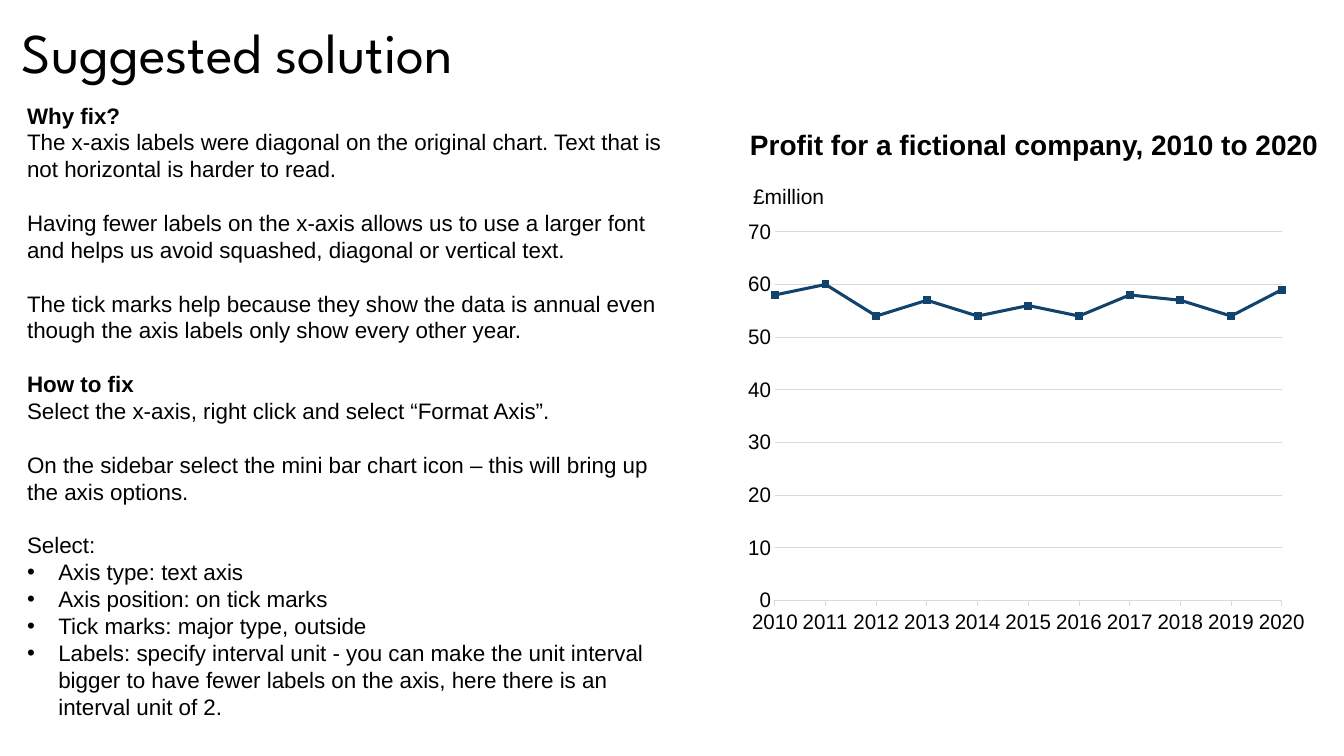
from lxml import etree
from pptx import Presentation
from pptx.chart.data import CategoryChartData
from pptx.dml.color import RGBColor
from pptx.enum.chart import XL_CHART_TYPE, XL_TICK_MARK
from pptx.enum.text import MSO_ANCHOR, MSO_AUTO_SIZE
from pptx.oxml import parse_xml
from pptx.oxml.ns import nsdecls, qn
from pptx.util import Inches, Pt

LINE = XL_CHART_TYPE.LINE
OUT, NONE = XL_TICK_MARK.OUTSIDE, XL_TICK_MARK.NONE
MIDDLE, TOP = MSO_ANCHOR.MIDDLE, MSO_ANCHOR.TOP
GROW = MSO_AUTO_SIZE.SHAPE_TO_FIT_TEXT

BLACK, GREY, NAVY = "000000", "D9D9D9", "12436D"
SANS = "Arial"
GAP = 19.2
HANG = Inches(0.31)

TITLE = "Suggested solution"
HEADING = "Profit for a fictional company, 2010 to 2020"
UNIT = "£million"
NOTES = [
    ("head", "Why fix?"),
    ("body", "The x-axis labels were diagonal on the original chart. "
             "Text that is not horizontal is harder to read."),
    ("gap", "Having fewer labels on the x-axis allows us to use a larger font "
            "and helps us avoid squashed, diagonal or vertical text."),
    ("gap", "The tick marks help because they show the data is annual even "
            "though the axis labels only show every other year."),
    ("head", "How to fix"),
    ("body", "Select the x-axis, right click and select “Format Axis”."),
    ("gap", "On the sidebar select the mini bar chart icon – this will "
            "bring up the axis options."),
    ("gap", "Select:"),
    ("item", "Axis type: text axis"),
    ("item", "Axis position: on tick marks"),
    ("item", "Tick marks: major type, outside"),
    ("item", "Labels: specify interval unit - you can make the unit interval "
             "bigger to have fewer labels on the axis, here there is an "
             "interval unit of 2."),
]
YEARS = [str(year) for year in range(2010, 2021)]
PROFIT = [58, 60, 54, 57, 54, 56, 54, 58, 57, 54, 59]
PLOT = {"x": 0.047, "y": 0.144, "w": 0.932, "h": 0.742}


def color(code):
    return RGBColor.from_string(code)


def style(font, size, name=SANS, bold=False):
    font.size, font.name, font.bold = Pt(size), name, bold
    font.color.rgb = color(BLACK)


def stroke(line, code, width):
    line.color.rgb = color(code)
    line.width = Pt(width)


def add_box(slide, area, anchor=TOP):
    frame = slide.shapes.add_textbox(*map(Inches, area)).text_frame
    frame.word_wrap = True
    frame.vertical_anchor = anchor
    return frame


def add_label(slide, area, text, size, bold=False):
    frame = add_box(slide, area)
    frame.auto_size = GROW
    frame.text = text
    style(frame.paragraphs[0].runs[0].font, size, bold=bold)


def add_title(slide):
    frame = add_box(slide, (0.12, -0.08, 11.93, 1.25), MIDDLE)
    frame.text = TITLE
    para = frame.paragraphs[0]
    para.line_spacing = 0.9
    style(para.runs[0].font, 40, "League Spartan")


def add_notes(slide):
    frame = add_box(slide, (0.17, 0.96, 6.71, 6.83))
    for i, (kind, text) in enumerate(NOTES):
        para = frame.add_paragraph() if i else frame.paragraphs[0]
        para.text = text
        if i and kind in ("head", "gap"):
            para.space_before = Pt(GAP)
        if kind == "item":
            props = para._p.get_or_add_pPr()
            props.set("marL", str(HANG))
            props.set("indent", str(-HANG))
            etree.SubElement(props, qn("a:buFont")).set("typeface", SANS)
            etree.SubElement(props, qn("a:buChar")).set("char", "•")
        style(para.runs[0].font, 16, bold=kind == "head")


def add_graph(slide):
    data = CategoryChartData()
    data.categories = YEARS
    data.add_series("Series 1", PROFIT)
    area = map(Inches, (7.42, 1.59, 5.52, 4.93))
    chart = slide.shapes.add_chart(LINE, *area, data).chart
    chart.has_legend = chart.has_title = False
    style(chart.font, 10, "Calibri")

    years, money = chart.category_axis, chart.value_axis
    for axis, tick in ((years, OUT), (money, NONE)):
        axis.major_tick_mark, axis.minor_tick_mark = tick, NONE
        style(axis.tick_labels.font, 15)
    years.has_major_gridlines = False
    stroke(years.format.line, GREY, 0.75)
    money.minimum_scale, money.maximum_scale, money.major_unit = 0, 70, 10
    money.format.line.fill.background()
    stroke(money.major_gridlines.format.line, GREY, 0.75)

    plot = chart.plots[0]
    plot.vary_by_categories = False
    series = plot.series[0]
    series.smooth = False
    series.marker.style = None
    stroke(series.format.line, NAVY, 2.25)

    root = chart._chartSpace
    cross = root.find(".//" + qn("c:crossBetween"))
    if cross is None:
        cross = etree.Element(qn("c:crossBetween"))
        root.find(".//" + qn("c:valAx")).find(qn("c:crosses")).addnext(cross)
    cross.set("val", "midCat")
    region = root.find(".//" + qn("c:plotArea"))
    old = region.find(qn("c:layout"))
    if old is not None:
        region.remove(old)
    modes = "".join(f'<c:{k}Mode val="edge"/>' for k in "xy")
    sizes = "".join(f'<c:{k} val="{v}"/>' for k, v in PLOT.items())
    region.insert(0, parse_xml(
        f'<c:layout {nsdecls("c")}><c:manualLayout>'
        f'<c:layoutTarget val="inner"/>{modes}{sizes}'
        '</c:manualLayout></c:layout>'))


def main():
    deck = Presentation()
    deck.slide_width, deck.slide_height = Inches(13.33), Inches(7.5)
    slide = deck.slides.add_slide(deck.slide_layouts[6])
    add_title(slide)
    add_label(slide, (7.34, 1.22, 6.54, 0.44), HEADING, 20, True)
    add_label(slide, (7.37, 1.77, 5.31, 0.35), UNIT, 15)
    add_graph(slide)
    add_notes(slide)
    deck.save("out.pptx")


if __name__ == "__main__":
    main()
